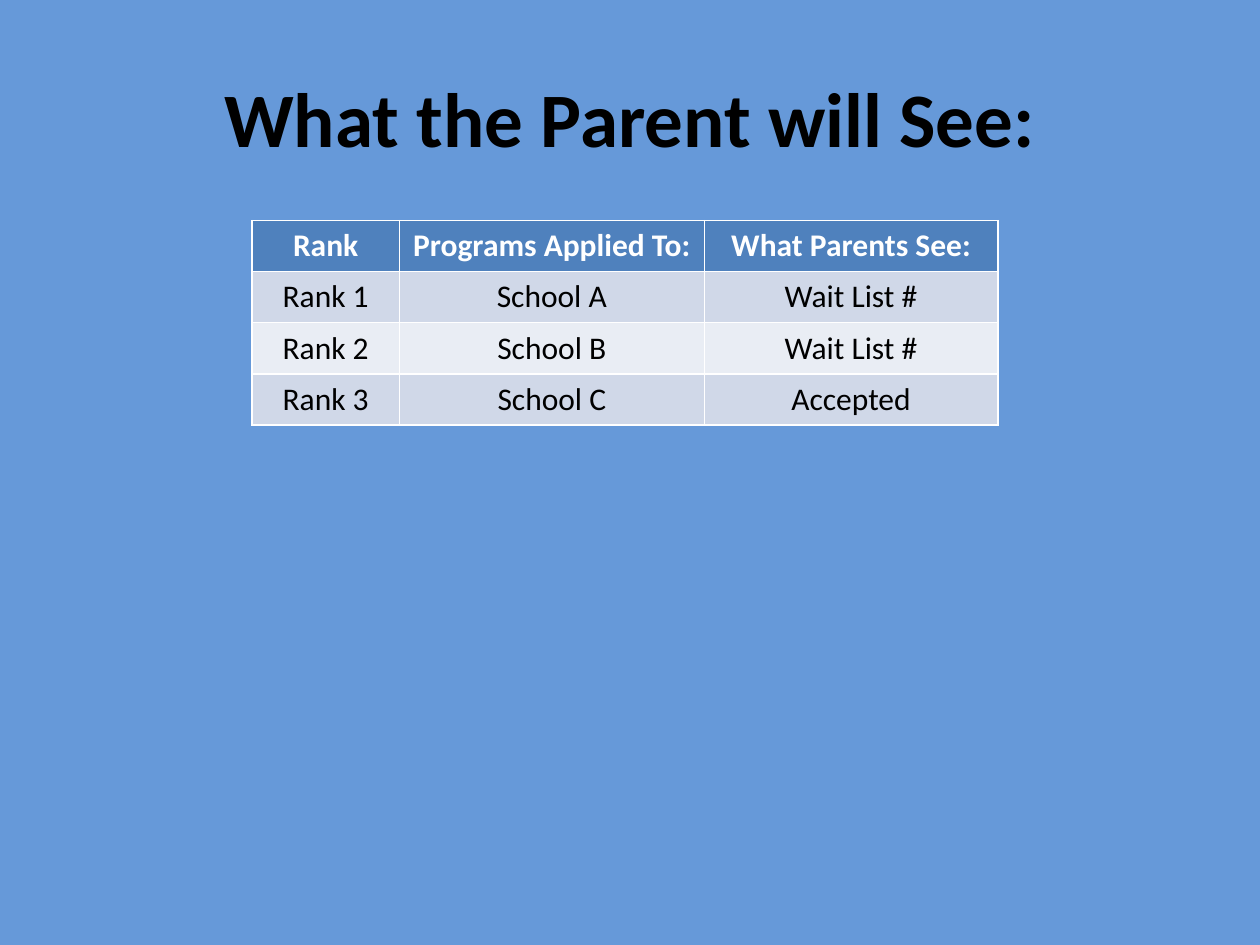
from pptx import Presentation
from pptx import util as u
from pptx.dml import color
from pptx.enum import text

HEADER_FILL = "4F81BD"
BAND_FILLS = ("D0D8E8", "E9EDF4")
COLUMN_WIDTHS = (1.17, 2.42, 2.33)
ROWS = (
    ("Rank", "Programs Applied To:", "What Parents See:"),
    ("Rank 1", "School A", "Wait List #"),
    ("Rank 2", "School B", "Wait List #"),
    ("Rank 3", "School C", "Accepted"),
)


def paint(fill, hex_color):
    """Give a fill one solid colour."""
    fill.solid()
    fill.fore_color.rgb = color.RGBColor.from_string(hex_color)


def write(frame, words, hex_color, **font_format):
    """Write one centred paragraph in the given format."""
    frame.text = words
    paragraph = frame.paragraphs[0]
    paragraph.alignment = text.PP_ALIGN.CENTER
    font = paragraph.runs[0].font
    for name, value in {"name": "Calibri", **font_format}.items():
        setattr(font, name, value)
    paint(font.fill, hex_color)


def place_title(slide, left, top, width, height):
    """Place the slide title in its box."""
    title = slide.shapes.title
    box = {"left": left, "top": top, "width": width, "height": height}
    for name, value in box.items():
        setattr(title, name, u.Inches(value))
    title.text_frame.vertical_anchor = text.MSO_ANCHOR.MIDDLE
    write(title.text_frame, "What the Parent will See:", "000000",
          size=u.Pt(44), bold=True)


def place_rank_table(slide, left, top, width, height):
    """Place the table of ranked programs and their results."""
    box = map(u.Inches, (left, top, width, height))
    table = slide.shapes.add_table(len(ROWS), len(COLUMN_WIDTHS), *box).table
    for column, column_width in zip(table.columns, COLUMN_WIDTHS):
        column.width = u.Inches(column_width)
    for row_index, row in enumerate(ROWS):
        is_header = row_index == 0
        row_fill = HEADER_FILL if is_header else BAND_FILLS[(row_index - 1) % 2]
        for column_index, words in enumerate(row):
            cell = table.cell(row_index, column_index)
            paint(cell.fill, row_fill)
            write(cell.text_frame, words, "FFFFFF" if is_header else "000000",
                  size=u.Pt(18), bold=is_header)


def main():
    """Build and save the slide."""
    presentation = Presentation()
    presentation.slide_width = u.Inches(10)
    presentation.slide_height = u.Inches(7.5)
    slide = presentation.slides.add_slide(presentation.slide_layouts[5])
    paint(slide.background.fill, "6699D9")
    place_title(slide, 0.5, 0.3, 9, 1.25)
    place_rank_table(slide, 2, 1.75, sum(COLUMN_WIDTHS), 1.62)
    presentation.save("out.pptx")


if __name__ == "__main__":
    main()
